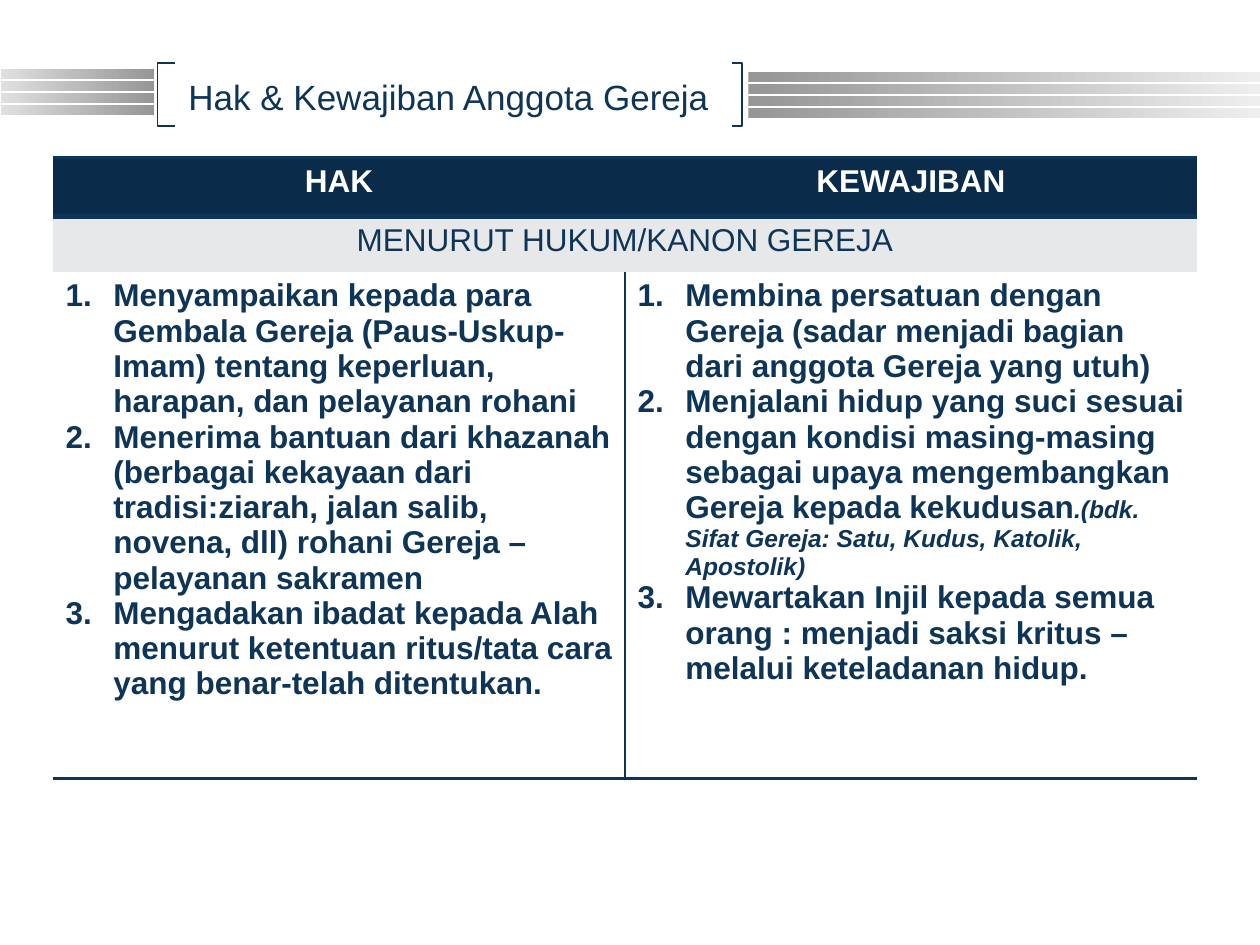
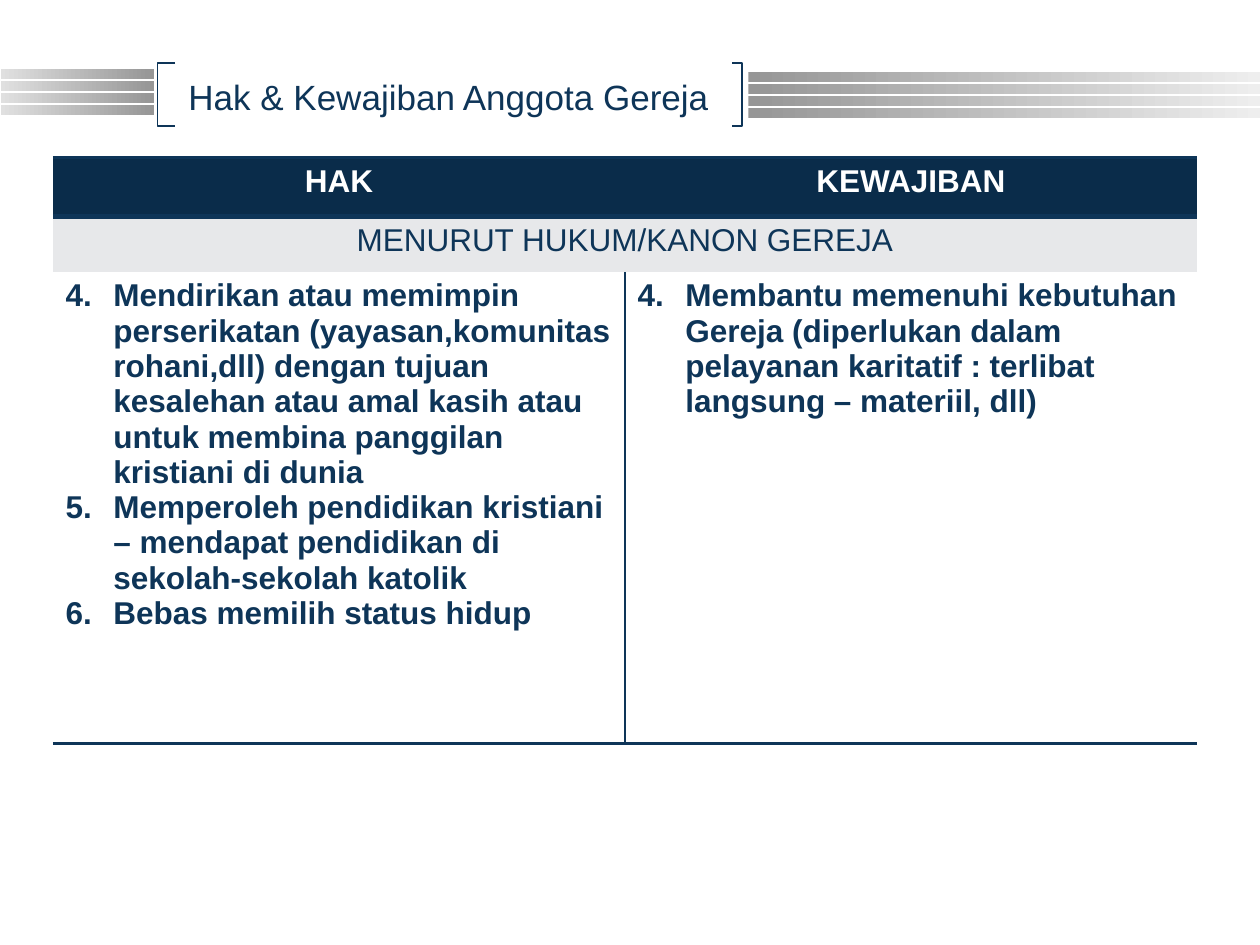
import pptx
import pptx.util
import pptx.dml.color
import pptx.enum.shapes
import pptx.enum.text
import pptx.oxml
from pptx.oxml import ns

Inches = pptx.util.Inches
Pt = pptx.util.Pt
ALIGN = pptx.enum.text.PP_ALIGN
ANCHOR = pptx.enum.text.MSO_ANCHOR

FONT = "Arial"
NAVY, DARK, WHITE, PALE = "0E3558", "0A2C4A", "FFFFFF", "E7E8EA"
GREY, LIGHT, FAINT = "969696", "E0E0E0", "EEEEEE"
TITLE = "Hak & Kewajiban Anggota Gereja"
HEADS = ["HAK", "KEWAJIBAN"]
BASIS = "MENURUT HUKUM/KANON GEREJA"
PLAIN = "{2D5ABB26-0587-4C30-8999-92F81FD0307C}"  # table style without grid

# Each page: first number, body row height, rights, duties.
# A duty or right may be a pair: text and a small italic note.
PAGES = [
    (1, 4.02, [
        "Menyampaikan kepada para Gembala Gereja (Paus-Uskup-Imam) "
        "tentang keperluan, harapan, dan pelayanan rohani",
        "Menerima bantuan dari khazanah (berbagai kekayaan dari "
        "tradisi:ziarah, jalan salib, novena, dll) rohani Gereja – "
        "pelayanan sakramen",
        "Mengadakan ibadat kepada Alah menurut ketentuan ritus/tata cara "
        "yang benar-telah ditentukan.",
    ], [
        "Membina persatuan dengan Gereja (sadar menjadi bagian dari "
        "anggota Gereja yang utuh)",
        ("Menjalani hidup yang suci sesuai dengan kondisi masing-masing "
         "sebagai upaya mengembangkan Gereja kepada kekudusan",
         ".(bdk. Sifat Gereja: Satu, Kudus, Katolik, Apostolik)"),
        "Mewartakan Injil kepada semua orang : menjadi saksi kritus – "
        "melalui keteladanan hidup.",
    ]),
    (4, 3.74, [
        "Mendirikan atau memimpin perserikatan (yayasan,komunitas "
        "rohani,dll) dengan tujuan kesalehan atau amal kasih atau untuk "
        "membina panggilan kristiani di dunia",
        "Memperoleh pendidikan kristiani – mendapat pendidikan di "
        "sekolah-sekolah katolik",
        "Bebas memilih status hidup",
    ], [
        "Membantu memenuhi kebutuhan Gereja (diperlukan dalam pelayanan "
        "karitatif : terlibat langsung – materiil, dll)",
    ]),
]


def color(code):
    return pptx.dml.color.RGBColor.from_string(code)


def style(run, size, code, bold=False, italic=False):
    font = run.font
    font.name, font.size = FONT, Pt(size)
    font.bold, font.italic = bold, italic
    font.color.rgb = color(code)


def add_bands(slide, left, top, width, start, end):
    """Four thin stripes that fade from one grey to another."""
    for row in range(4):
        band = slide.shapes.add_shape(
            pptx.enum.shapes.MSO_SHAPE.RECTANGLE, Inches(left),
            Inches(top + row * 0.095), Inches(width), Inches(0.08))
        band.shadow.inherit = False
        band.line.fill.background()
        band.fill.gradient()
        band.fill.gradient_angle = 0
        for stop, code in zip(band.fill.gradient_stops, (start, end)):
            stop.color.rgb = color(code)


def add_hook(slide, tip, spine):
    """Square bracket around the title, open towards tip."""
    top, base = Inches(0.5), Inches(1)
    tip, spine = Inches(tip), Inches(spine)
    path = slide.shapes.build_freeform(tip, top)
    path.add_line_segments([(spine, top), (spine, base), (tip, base)],
                           close=False)
    hook = path.convert_to_shape()
    hook.shadow.inherit = False
    hook.fill.background()
    hook.line.color.rgb = color(NAVY)
    hook.line.width = Pt(0.75)


def add_title(slide):
    box = slide.shapes.add_textbox(Inches(1.31), Inches(0.5),
                                   Inches(4.5), Inches(0.53))
    frame = box.text_frame
    frame.word_wrap = True
    frame.vertical_anchor = ANCHOR.MIDDLE
    frame.text = TITLE
    para = frame.paragraphs[0]
    para.alignment = ALIGN.CENTER
    style(para.runs[0], 20, NAVY)


def add_frame(slide):
    """Stripes, brackets and title, the same on every slide."""
    add_bands(slide, 0.01, 0.55, 1.21, LIGHT, GREY)
    add_hook(slide, 1.39, 1.25)
    add_bands(slide, 5.94, 0.57, 4.06, GREY, FAINT)
    add_hook(slide, 5.81, 5.89)
    add_title(slide)


def paint(cell, code, **edges):
    """Fill a cell and draw edges given as L, R, T, B widths in points."""
    cell.fill.solid()
    cell.fill.fore_color.rgb = color(code)
    props = cell._tc.get_or_add_tcPr()
    sides = [side for side in "LRTB" if side in edges]
    for place, side in enumerate(sides):
        props.insert(place, pptx.oxml.parse_xml(
            f'<a:ln{side} {ns.nsdecls("a")} w="{Pt(edges[side])}">'
            f'<a:solidFill><a:srgbClr val="{NAVY}"/></a:solidFill>'
            f'</a:ln{side}>'))


def write_head(cell, text, code, bold):
    cell.text_frame.text = text
    para = cell.text_frame.paragraphs[0]
    para.alignment = ALIGN.CENTER
    style(para.runs[0], 18, code, bold)


def number(para, first):
    """Number a paragraph with a hanging indent."""
    props = para._p.get_or_add_pPr()
    props.set("marL", str(Inches(0.38)))
    props.set("indent", str(-Inches(0.38)))
    props.append(pptx.oxml.parse_xml(
        f'<a:buFont {ns.nsdecls("a")} typeface="+mj-lt"/>'))
    props.append(pptx.oxml.parse_xml(
        f'<a:buAutoNum {ns.nsdecls("a")} type="arabicPeriod" '
        f'startAt="{first}"/>'))


def write_list(cell, items, first):
    frame = cell.text_frame
    for place, item in enumerate(items):
        text, note = item if isinstance(item, tuple) else (item, "")
        para = frame.add_paragraph() if place else frame.paragraphs[0]
        para.text = text
        number(para, first)
        style(para.runs[0], 18, NAVY, True)
        if note:
            run = para.add_run()
            run.text = note
            style(run, 14, NAVY, True, True)


def add_grid(slide, first, height, rights, duties):
    rows = [0.47, 0.44, height]
    frame = slide.shapes.add_table(3, 2, Inches(0.42), Inches(1.25),
                                   Inches(9.08), Inches(sum(rows)))
    grid = frame.table
    grid.first_row = grid.horz_banding = False
    grid._tbl.tblPr.find(ns.qn("a:tableStyleId")).text = PLAIN
    for row, tall in zip(grid.rows, rows):
        row.height = Inches(tall)

    for col, head in enumerate(HEADS):
        cell = grid.cell(0, col)
        write_head(cell, head, WHITE, True)
        paint(cell, DARK, T=2, B=3)

    basis = grid.cell(1, 0)
    basis.merge(grid.cell(1, 1))
    write_head(basis, BASIS, NAVY, False)
    paint(basis, PALE)

    for col, (items, side) in enumerate([(rights, "R"), (duties, "L")]):
        cell = grid.cell(2, col)
        write_list(cell, items, first)
        paint(cell, WHITE, **{side: 1, "B": 2})


def main():
    deck = pptx.Presentation()
    deck.slide_width, deck.slide_height = Inches(10), Inches(7.5)
    for page in PAGES:
        slide = deck.slides.add_slide(deck.slide_layouts[6])
        add_frame(slide)
        add_grid(slide, *page)
    deck.save("out.pptx")


if __name__ == "__main__":
    main()
